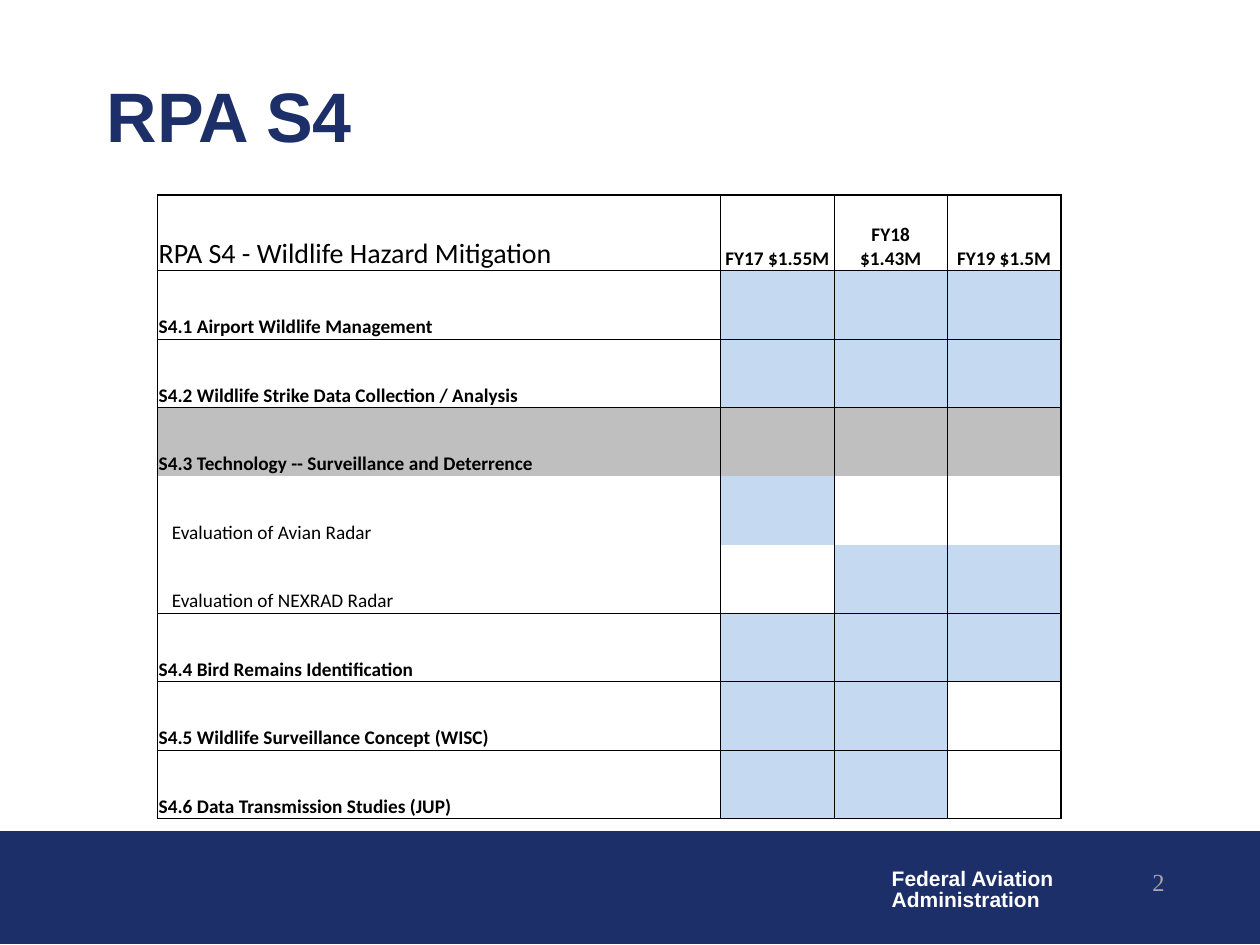
import pptx
import pptx.dml.color
import pptx.enum.shapes
import pptx.enum.text
import pptx.oxml
import pptx.oxml.ns
import pptx.util

Pt = pptx.util.Pt
ALIGN = pptx.enum.text.PP_ALIGN
ANCHOR = pptx.enum.text.MSO_ANCHOR

NAVY, WHITE, BLACK = "1D2F68", "FFFFFF", "000000"
FUNDED, HEADING_GRAY, NUMBER_GRAY = "C5D9F1", "BFBFBF", "A6A6A6"

YEARS = ["FY17 $1.55M", "FY18\n$1.43M", "FY19 $1.5M"]
# Label, whether it is a main task, and the fill of each year's cell
TASKS = [
    ("S4.1 Airport Wildlife Management", True, [FUNDED] * 3),
    ("S4.2 Wildlife Strike Data Collection / Analysis", True, [FUNDED] * 3),
    ("S4.3 Technology -- Surveillance and Deterrence", True, [HEADING_GRAY] * 3),
    ("Evaluation of Avian Radar", False, [FUNDED, WHITE, WHITE]),
    ("Evaluation of NEXRAD Radar", False, [WHITE, FUNDED, FUNDED]),
    ("S4.4 Bird Remains Identification", True, [FUNDED] * 3),
    ("S4.5 Wildlife Surveillance Concept (WISC)", True, [FUNDED, FUNDED, WHITE]),
    ("S4.6 Data Transmission Studies (JUP)", True, [FUNDED, FUNDED, WHITE]),
]
# Width of each grid line in points; 0 is no line
ROW_LINES = [1, 1, 0.5, 0.5, 0, 0, 0.5, 0.5, 0.5, 1]
COLUMN_LINES = [1, 0.5, 0.5, 0.5, 1]


def color(hex_value):
    return pptx.dml.color.RGBColor.from_string(hex_value)


def add_run(paragraph, text, size, font, hex_value, bold=False):
    run = paragraph.add_run()
    run.text = text
    run.font.size = Pt(size)
    run.font.name = font
    run.font.bold = bold
    run.font.color.rgb = color(hex_value)


def add_text(slide, box, lines, size, font, hex_value, bold=False,
             align=ALIGN.LEFT, anchor=ANCHOR.TOP, spacing=None, wrap=True):
    frame = slide.shapes.add_textbox(*map(Pt, box)).text_frame
    frame.word_wrap = wrap
    frame.vertical_anchor = anchor
    for index, line in enumerate(lines):
        paragraph = frame.add_paragraph() if index else frame.paragraphs[0]
        paragraph.alignment = align
        paragraph.line_spacing = spacing
        add_run(paragraph, line, size, font, hex_value, bold)


def set_border(cell, side, width):
    properties = cell._tc.get_or_add_tcPr()
    if width:
        paint = f'<a:solidFill><a:srgbClr val="{BLACK}"/></a:solidFill>'
    else:
        paint = "<a:noFill/>"
    properties.append(pptx.oxml.parse_xml(
        f'<a:ln{side} {pptx.oxml.ns.nsdecls("a")} w="{int(Pt(width))}">{paint}</a:ln{side}>'))


def fill_cell(cell, row, column, hex_value):
    """Draw the grid lines around a cell, then its fill."""
    set_border(cell, "L", COLUMN_LINES[column])
    set_border(cell, "R", COLUMN_LINES[column + 1])
    set_border(cell, "T", ROW_LINES[row])
    set_border(cell, "B", ROW_LINES[row + 1])
    cell.fill.solid()
    cell.fill.fore_color.rgb = color(hex_value)


def write_cell(cell, text, size=11, bold=True, align=ALIGN.LEFT, indent=0):
    cell.vertical_anchor = ANCHOR.BOTTOM
    cell.margin_left = Pt(0.72 + indent)
    cell.margin_right = cell.margin_top = Pt(0.72)
    cell.margin_bottom = 0
    paragraph = cell.text_frame.paragraphs[0]
    paragraph.alignment = align
    for index, line in enumerate(text.split("\n")):
        if index:
            paragraph.add_line_break()
        add_run(paragraph, line, size, "Calibri", BLACK, bold)


def add_funding_table(slide, box):
    left, top, width, height = box
    year_width, header_height = 64.8, 43.2
    table = slide.shapes.add_table(
        len(TASKS) + 1, len(YEARS) + 1, *map(Pt, box)).table
    table.first_row = table.horz_banding = False
    table.columns[0].width = Pt(width - len(YEARS) * year_width)
    for column in range(1, len(YEARS) + 1):
        table.columns[column].width = Pt(year_width)
    table.rows[0].height = Pt(header_height)
    for row in range(1, len(TASKS) + 1):
        table.rows[row].height = Pt((height - header_height) / len(TASKS))

    write_cell(table.cell(0, 0), "RPA S4 - Wildlife Hazard Mitigation", 16, False)
    fill_cell(table.cell(0, 0), 0, 0, WHITE)
    for column, year in enumerate(YEARS, 1):
        write_cell(table.cell(0, column), year, align=ALIGN.CENTER)
        fill_cell(table.cell(0, column), 0, column, WHITE)
    for row, (label, main, year_fills) in enumerate(TASKS, 1):
        write_cell(table.cell(row, 0), label, bold=main, indent=0 if main else 7.5)
        label_fill = HEADING_GRAY if HEADING_GRAY in year_fills else WHITE
        for column, hex_value in enumerate([label_fill] + year_fills):
            fill_cell(table.cell(row, column), row, column, hex_value)


def add_footer(slide, box):
    left, top, width, height = box
    band = slide.shapes.add_shape(
        pptx.enum.shapes.MSO_SHAPE.RECTANGLE, *map(Pt, box))
    band.shadow.inherit = False
    band.fill.solid()
    band.fill.fore_color.rgb = color(NAVY)
    band.line.color.rgb = color(NAVY)
    band.line.width = Pt(0.75)
    add_text(slide, (left + 502.5, top + 18, 108, 31.7),
             ["Federal Aviation", "Administration"], 12, "Arial", WHITE,
             bold=True, spacing=0.85, wrap=False)
    add_text(slide, (left + 522.7, top + 16.6, 149.8, 36), ["2"], 14,
             "Times New Roman", NUMBER_GRAY, align=ALIGN.RIGHT)


def main():
    presentation = pptx.Presentation()
    presentation.slide_width, presentation.slide_height = Pt(720), Pt(540)
    slide = presentation.slides.add_slide(presentation.slide_layouts[6])
    add_footer(slide, (0, 475.2, 720, 64.1))
    add_text(slide, (54, 18.7, 652.3, 92.9), ["RPA S4"], 40, "Arial", NAVY,
             bold=True, anchor=ANCHOR.MIDDLE)
    add_funding_table(slide, (90, 111.4, 516.2, 356.4))
    presentation.save("out.pptx")


if __name__ == "__main__":
    main()
